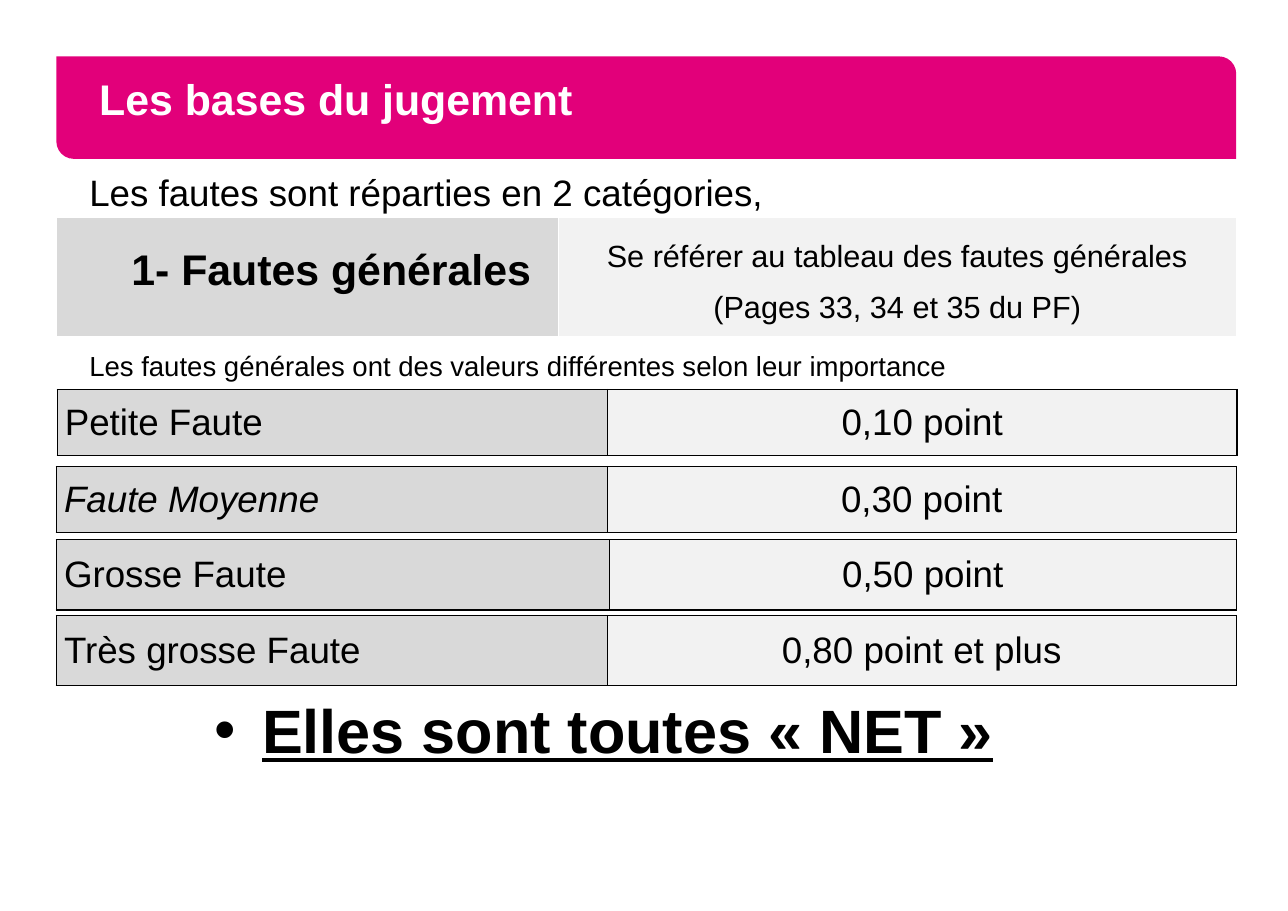
from lxml import etree
from pptx import Presentation
from pptx.dml.color import RGBColor
from pptx.enum.shapes import MSO_SHAPE
from pptx.enum.text import MSO_ANCHOR, MSO_AUTO_SIZE, PP_ALIGN
from pptx.oxml.ns import qn
from pptx.util import Pt

BANNER = MSO_SHAPE.ROUND_2_DIAG_RECTANGLE
MIDDLE, TOP = MSO_ANCHOR.MIDDLE, MSO_ANCHOR.TOP
NO_FIT = MSO_AUTO_SIZE.NONE
LEFT, CENTER = PP_ALIGN.LEFT, PP_ALIGN.CENTER

COLORS = {
    "pink": "E2007A",
    "white": "FFFFFF",
    "black": "000000",
    "label": "D9D9D9",
    "value": "F2F2F2",
}
MARGIN, WIDTH = 36.85, 771


class Page:
    font = "Arial"

    def __init__(self, deck):
        self.slide = deck.slides.add_slide(deck.slide_layouts[5])
        self.shapes = self.slide.shapes

    def set_text(self, frame, text, size, color="black", align=LEFT, bold=False):
        frame.text = text
        para = frame.paragraphs[0]
        para.alignment = align
        for span in para.runs:
            span.font.name = self.font
            span.font.size = Pt(size)
            span.font.bold = bold
            span.font.color.rgb = RGBColor.from_string(COLORS[color])
        return para

    def title(self, text, top, height):
        """Place the title on a pink banner with two rounded corners."""
        area = Pt(MARGIN), Pt(top), Pt(WIDTH), Pt(height)
        banner = self.shapes.add_shape(BANNER, *area)
        banner.adjustments[0], banner.adjustments[1] = 0, 0.17
        banner.shadow.inherit = False
        banner.fill.solid()
        banner.fill.fore_color.rgb = RGBColor.from_string(COLORS["pink"])
        banner.line.fill.background()

        title = self.shapes.title
        title.left, title.top, title.width, title.height = area
        title.element.addprevious(banner.element)
        frame = title.text_frame
        frame.auto_size = NO_FIT
        frame.vertical_anchor = MIDDLE
        frame.margin_left = frame.margin_right = Pt(28)
        self.set_text(frame, text, 28, "white", bold=True).line_spacing = Pt(22)

    def text(self, text, top, height, size, indent, bold=False):
        box = self.shapes.add_textbox(Pt(MARGIN), Pt(top), Pt(WIDTH), Pt(height))
        box.text_frame.word_wrap = True
        para = self.set_text(box.text_frame, text, size, bold=bold)
        para._p.get_or_add_pPr().set("marL", str(Pt(indent)))
        return para

    def bullet(self, text, top, height, size, indent, hanging):
        para = self.text(text, top, height, size, indent, bold=True)
        properties = para._p.get_or_add_pPr()
        properties.set("indent", str(-Pt(hanging)))
        etree.SubElement(properties, qn("a:buFont"), typeface=self.font)
        etree.SubElement(properties, qn("a:buChar"), char="•")
        para.runs[0].font.underline = True

    def table(self, top, height, split, left=MARGIN):
        """Add one row of two filled cells; split is the first column's width."""
        table = self.shapes.add_table(
            1, 2, Pt(left), Pt(top), Pt(WIDTH), Pt(height)).table
        table.first_row = table.horz_banding = False
        table.columns[0].width, table.columns[1].width = Pt(split), Pt(WIDTH - split)
        cells = table.cell(0, 0), table.cell(0, 1)
        for cell, color in zip(cells, ("label", "value")):
            cell.fill.solid()
            cell.fill.fore_color.rgb = RGBColor.from_string(COLORS[color])
        return cells

    def borders(self, cell, color, bottom=1):
        properties = cell._tc.get_or_add_tcPr()
        for place, side in enumerate("LRTB"):
            width = bottom if side == "B" else 1
            line = etree.Element(qn(f"a:ln{side}"), w=str(Pt(width)))
            fill = etree.SubElement(line, qn("a:solidFill"))
            etree.SubElement(fill, qn("a:srgbClr"), val=COLORS[color])
            properties.insert(place, line)

    def category(self, name, reference, top, height, split):
        cells = self.table(top, height, split)
        for cell, text, size, bold in zip(cells, (name, reference), (28, 20), (True, False)):
            cell.vertical_anchor = TOP
            para = self.set_text(cell.text_frame, text, size, align=CENTER, bold=bold)
            para.line_spacing = 1.5
            self.borders(cell, "white", bottom=3)
        cells[0].margin_left = Pt(38)

    def fault(self, name, value, top, height, split, left, italic):
        cells = self.table(top, height, split, left)
        for cell, text, align in zip(cells, (name, value), (LEFT, CENTER)):
            cell.vertical_anchor = MIDDLE
            cell.margin_left = cell.margin_right = Pt(5)
            cell.margin_top = cell.margin_bottom = 0
            self.set_text(cell.text_frame, text, 24, align=align)
            self.borders(cell, "black")
        cells[0].text_frame.paragraphs[0].runs[0].font.italic = italic


def main():
    deck = Presentation()
    deck.slide_width, deck.slide_height = Pt(841.68), Pt(595.44)
    page = Page(deck)
    page.title("Les bases du jugement", 36.85, 67)
    page.text("Les fautes sont réparties en 2 catégories,", 107.3, 35, 24, 14.4)
    page.category("1- Fautes générales",
                  "Se référer au tableau des fautes générales (Pages 33, 34 et 35 du PF)",
                  141.8, 77, 328.3)
    page.text("Les fautes générales ont des valeurs différentes selon leur importance",
              224.4, 30, 18, 14.4)
    faults = [
        ("Petite Faute", "0,10 point", 254.6, 43.2, 359.5, 37.4, False),
        ("Faute Moyenne", "0,30 point", 305, 43.2, 360, MARGIN, True),
        ("Grosse Faute", "0,50 point", 352.8, 46, 361.4, MARGIN, False),
        ("Très grosse Faute", "0,80 point et plus", 402.3, 46, 360, MARGIN, False),
    ]
    for fault in faults:
        page.fault(*fault)
    page.bullet("Elles sont toutes « NET »", 448.9, 54, 40, 127.4, 31)
    deck.save("out.pptx")


if __name__ == "__main__":
    main()
